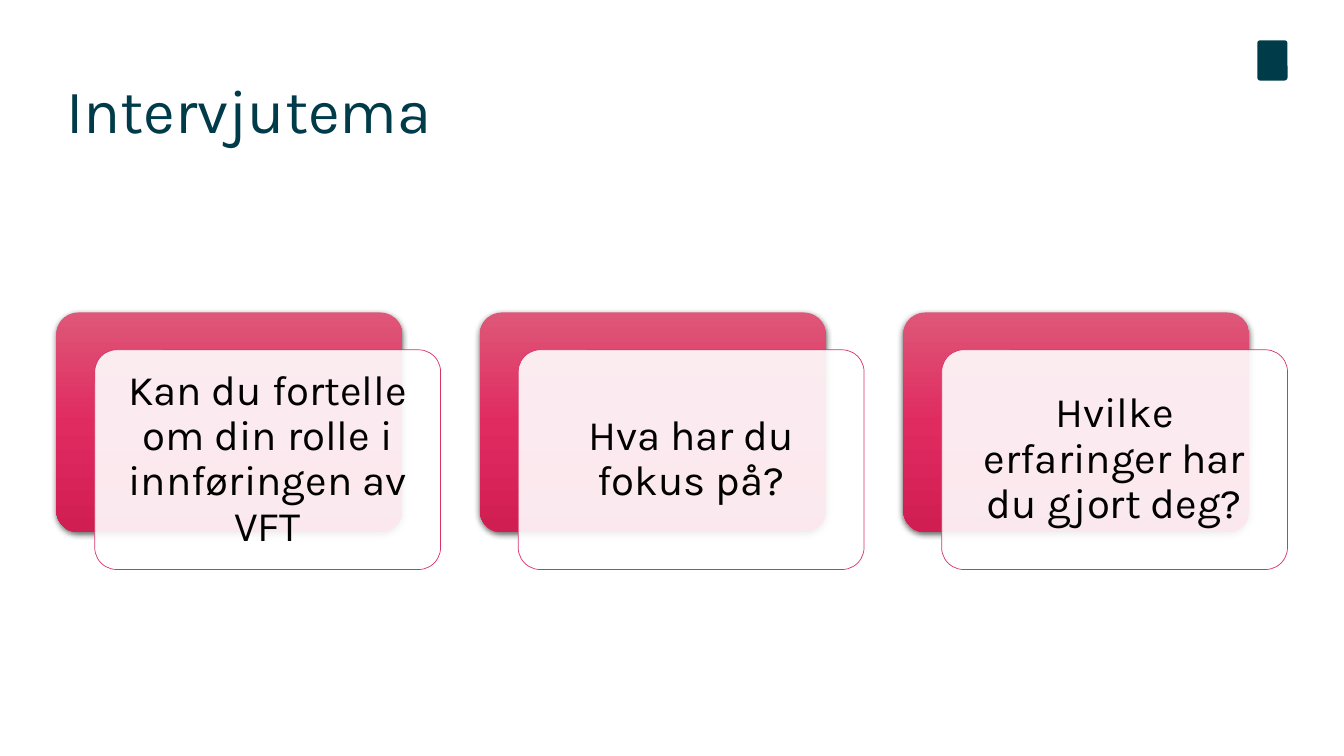
from copy import deepcopy
from lxml.etree import SubElement as Sub
from pptx import Presentation
from pptx.dml.color import RGBColor as RGB
from pptx.enum.shapes import MSO_SHAPE as Shape
from pptx.enum.text import MSO_ANCHOR as Anchor, PP_ALIGN as Align
from pptx.oxml.ns import qn
from pptx.util import Inches, Pt

TEAL = RGB(0x00, 0x3B, 0x49)
BLACK = RGB(0x00, 0x00, 0x00)
WHITE = RGB(0xFF, 0xFF, 0xFF)
EDGE = RGB(0xD8, 0x33, 0x64)
PINKS = [RGB(0xDE, 0x57, 0x78), RGB(0xE0, 0x2B, 0x61), RGB(0xD0, 0x1D, 0x52)]

THEMES = [
    "Kan du fortelle om din rolle i innføringen av VFT",
    "Hva har du fokus på?",
    "Hvilke erfaringer har du gjort deg?",
]
LEFT, TOP, STEP = 0.56, 3.1, 4.2
WIDE, HIGH = 3.43, 2.18
SHIFT_X, SHIFT_Y = 0.38, 0.37


def write(frame, text, size, color=BLACK, align=Align.LEFT, inset=None):
    frame.word_wrap = True
    frame.vertical_anchor = Anchor.MIDDLE
    if inset is not None:
        frame.margin_left = frame.margin_right = Inches(inset)
        frame.margin_top = frame.margin_bottom = Inches(inset)
    para = frame.paragraphs[0]
    para.alignment = align
    para.line_spacing = 0.9
    run = para.add_run()
    run.text = text
    run.font.name = "Karla"
    run.font.size = Pt(size)
    run.font.color.rgb = color


class Page:
    def __init__(self, slide, font_size):
        self.shapes = slide.shapes
        self.size = font_size

    def title(self, text):
        box = self.shapes.add_textbox(
            Inches(LEFT), Inches(0.4), Inches(12.2), Inches(1.45))
        write(box.text_frame, text, 44, TEAL)

    def round(self, x, y, w, h, adj=0.1):
        """Add a rounded rectangle without line or shadow."""
        shape = self.shapes.add_shape(
            Shape.ROUNDED_RECTANGLE, Inches(x), Inches(y), Inches(w), Inches(h))
        shape.adjustments[0] = adj
        shape.line.fill.background()
        shape.shadow.inherit = False
        return shape

    def mark(self):
        """Add the plain corner mark."""
        shape = self.round(12.47, 0.4, 0.3, 0.4)
        shape.fill.solid()
        shape.fill.fore_color.rgb = TEAL

    def back(self, x, y):
        """Add the pink gradient panel with its soft shadow."""
        shape = self.round(x, y, WIDE, HIGH)
        fill, props = shape.fill, shape.element.spPr
        fill.gradient()
        fill.gradient_angle = 270
        stops = props.find(".//" + qn("a:gsLst"))
        stops.insert(1, deepcopy(stops[0]))
        for i, (stop, color) in enumerate(zip(fill.gradient_stops, PINKS)):
            stop.position = i / 2
            stop.color.rgb = color
        glow = Sub(props.find(qn("a:effectLst")), qn("a:outerShdw"),
                   blurRad=str(Pt(4.5)), dist=str(Pt(1.5)),
                   dir="5400000", algn="ctr", rotWithShape="0")
        tint = Sub(glow, qn("a:srgbClr"), val=str(BLACK))
        Sub(tint, qn("a:alpha"), val="63000")

    def card(self, x, y, text):
        """Add the translucent white card that holds a theme."""
        shape = self.round(x, y, WIDE, HIGH)
        shape.fill.solid()
        shape.fill.fore_color.rgb = WHITE
        tint = shape.element.spPr.find(
            qn("a:solidFill") + "/" + qn("a:srgbClr"))
        Sub(tint, qn("a:alpha"), val="90000")
        shape.line.color.rgb = EDGE
        shape.line.width = Pt(0.5)
        write(shape.text_frame, text, self.size, align=Align.CENTER, inset=0.12)


def main():
    deck = Presentation()
    deck.slide_width, deck.slide_height = Inches(13.33), Inches(7.5)
    page = Page(deck.slides.add_slide(deck.slide_layouts[6]), 30)
    page.mark()
    page.title("Intervjutema")
    for i, theme in enumerate(THEMES):
        x = LEFT + i * STEP
        page.back(x, TOP)
        page.card(x + SHIFT_X, TOP + SHIFT_Y, theme)
    deck.save("out.pptx")


if __name__ == "__main__":
    main()
